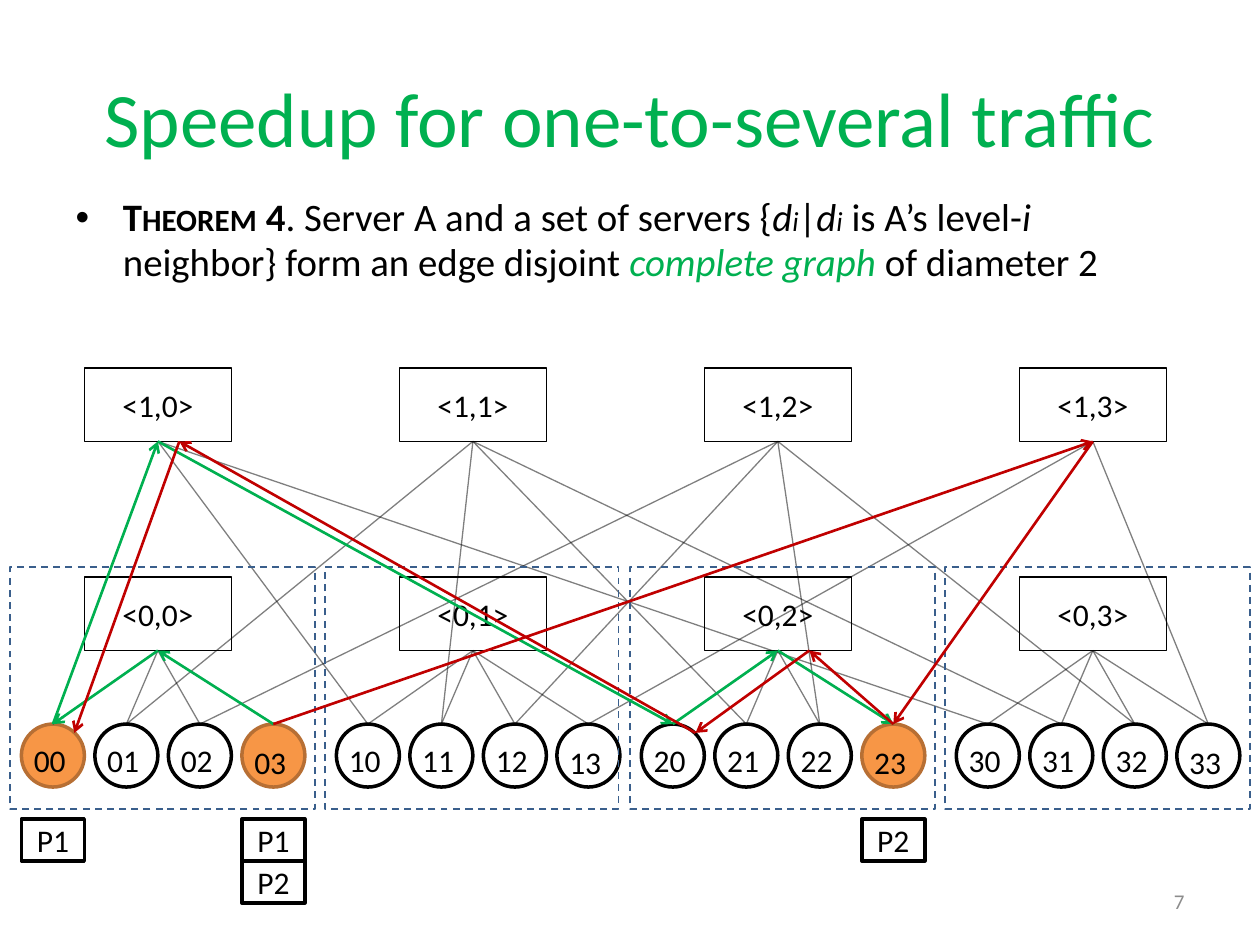
from pptx import Presentation
from pptx.dml.color import RGBColor
from pptx.enum.dml import MSO_LINE
from pptx.enum.shapes import MSO_CONNECTOR, MSO_SHAPE
from pptx.enum.text import MSO_ANCHOR, MSO_AUTO_SIZE, PP_ALIGN
from pptx.oxml.ns import qn
from pptx.util import Inches, Pt
from lxml import etree

RECT, OVAL = MSO_SHAPE.RECTANGLE, MSO_SHAPE.OVAL
LINE, DASH = MSO_CONNECTOR.STRAIGHT, MSO_LINE.DASH
MIDDLE, TOP_ANCHOR = MSO_ANCHOR.MIDDLE, MSO_ANCHOR.TOP
LEFT, CENTER, RIGHT = PP_ALIGN.LEFT, PP_ALIGN.CENTER, PP_ALIGN.RIGHT
NO_FIT = MSO_AUTO_SIZE.NONE

COLORS = {
    "black": "000000", "white": "FFFFFF", "green": "00B050", "red": "C00000",
    "orange": "F79646", "rust": "B76F34", "blue": "3A5F8C", "gray": "8C8C8C",
}
FONT = "Calibri"
TOP, BOTTOM = 0, 2
STEP = 7 / 12
SERVER = 0.5
PODS = [(0.08, 2.42), (2.58, 2.33), (5, 2.42), (7.5, 2.42)]
MARKED = {"00", "03", "23"}
TAGS = [("00", 0, "P1"), ("23", 0, "P2"), ("03", 0, "P1"), ("03", 1, "P2")]
THEOREM = [
    ("Theorem", {"bold": True}, "caps"),
    (" 4", {"bold": True}, ""),
    (". Server A and a set of servers {", {}, ""),
    ("d", {"italic": True}, ""),
    ("i", {"italic": True, "size": Pt(15.7)}, ""),
    ("|", {}, ""),
    ("d", {"italic": True}, ""),
    ("i", {"italic": True, "size": Pt(15.7)}, ""),
    (" is A’s level-", {}, ""),
    ("i", {"italic": True}, ""),
    (" neighbor} form an edge disjoint ", {}, ""),
    ("complete graph ", {"italic": True}, "green"),
    ("of diameter 2", {}, ""),
]
ROUTES = {
    "green": [
        (("03",), ("<0,0>",)), (("<0,0>",), ("00",)),
        (("<0,2>",), ("23",)), (("20",), ("<0,2>",)),
        (("<1,0>",), ("20",)), (("00",), ("<1,0>",)),
    ],
    "red": [
        (("<1,3>",), ("23",)), (("03",), ("<1,3>",)),
        (("<1,0>", 0.17, 0), ("00", 0.17, 0.07)),
        (("23",), ("<0,2>", 0.25, 0)),
        (("20", 0.18, 0.07), ("<1,0>", 0.17, 0)),
        (("<0,2>", 0.25, 0), ("20", 0.18, 0.07)),
    ],
}


def paint(color):
    """Return the named colour."""
    return RGBColor.from_string(COLORS[color])


def style(item, values):
    """Set each attribute in values on item."""
    for name, value in values.items():
        setattr(item, name, value)


def write(para, text, color="black", **values):
    """Add one formatted run to a paragraph."""
    run = para.add_run()
    run.text = text
    style(run.font, {"name": FONT, "size": Pt(18), **values})
    run.font.color.rgb = paint(color)
    return run


def add_box(slide, kind, box, fill, edge, width, text=""):
    """Add a filled or hollow shape with centred text."""
    shape = slide.shapes.add_shape(kind, *map(Inches, box))
    shape.shadow.inherit = False
    if fill:
        shape.fill.solid()
        shape.fill.fore_color.rgb = paint(fill)
    else:
        shape.fill.background()
    shape.line.color.rgb = paint(edge)
    shape.line.width = Pt(width)
    if text:
        style(shape.text_frame, {"vertical_anchor": MIDDLE, "word_wrap": True})
        para = shape.text_frame.paragraphs[0]
        para.alignment = CENTER
        write(para, text)
    return shape


def add_label(slide, box, text, align=LEFT, anchor=TOP_ANCHOR, **values):
    """Add a plain text box."""
    frame = slide.shapes.add_textbox(*map(Inches, box)).text_frame
    style(frame, {"word_wrap": True, "vertical_anchor": anchor})
    para = frame.paragraphs[0]
    para.alignment = align
    write(para, text, **values)


def add_link(slide, nodes, start, end, color="black", width=0.75, arrow=False):
    """Link two nodes, each given by name and an optional offset."""
    points = []
    for name, *shift in (start, end):
        shape, site = nodes[name]
        x = shape.left + shape.width // 2
        y = shape.top + (shape.height if site == BOTTOM else 0)
        dx, dy = shift or (0, 0)
        points += [x + Inches(dx), y + Inches(dy)]
    link = slide.shapes.add_connector(LINE, *points)
    for (name, *shift), join in ((start, link.begin_connect), (end, link.end_connect)):
        if not shift:
            join(*nodes[name])
    link.line.color.rgb = paint(color)
    link.line.width = Pt(width)
    props = link._element.spPr
    line = props.find(qn("a:ln"))
    if arrow:
        etree.SubElement(line, qn("a:tailEnd"), type="arrow")
    else:
        tint = line.find(".//" + qn("a:srgbClr"))
        etree.SubElement(tint, qn("a:alpha"), val="50000")
    etree.SubElement(props, qn("a:effectLst"))


def add_switch(slide, nodes, x, y, name):
    """Add one switch and record its lower side."""
    box = (x, y, 2 * STEP, STEP)
    nodes[name] = (add_box(slide, RECT, box, "white", "black", 0.75, name), BOTTOM)


def add_pod(slide, nodes, x, y, pod):
    """Add a level-0 switch with its four servers."""
    switch = f"<0,{pod}>"
    add_switch(slide, nodes, x + SERVER, y, switch)
    names = [f"{pod}{num}" for num in range(4)]
    spots = [x + num * STEP for num in range(4)]
    for name, left in zip(names, spots):
        fill, edge = ("orange", "rust") if name in MARKED else ("white", "black")
        box = (left, y + 2 * STEP, SERVER, SERVER)
        nodes[name] = (add_box(slide, OVAL, box, fill, edge, 2), TOP)
    for name in names:
        add_link(slide, nodes, (name,), (switch,))
    for name, left in zip(names, spots):
        drop = 1.27 if name == names[-1] else 1.25
        add_label(slide, (left, y + drop, SERVER, 0.4), name)


def add_net(slide, x, y):
    """Add both switch levels, the servers, pod frames, tags and routes."""
    nodes = {}
    lefts = [x + left + 0.09 for left, _ in PODS]
    for pod, left in enumerate(lefts):
        add_pod(slide, nodes, left, y + 1.66, pod)
    for pod, left in enumerate(lefts):
        add_switch(slide, nodes, left + SERVER, y, f"<1,{pod}>")
    for pod in range(4):
        for num in range(4):
            add_link(slide, nodes, (f"{pod}{num}",), (f"<1,{num}>",))
    for left, width in PODS:
        frame = add_box(slide, RECT, (x + left, y + 1.58, width, 1.92), None, "blue", 1)
        frame.line.dash_style = DASH
    for name, row, text in TAGS:
        left = nodes[name][0].left / Inches(1)
        box = (left, y + 3.58 + row / 3, SERVER, 1 / 3)
        add_box(slide, RECT, box, "white", "black", 2, text)
    for color, links in ROUTES.items():
        for start, end in links:
            add_link(slide, nodes, start, end, color, 1.5, True)


def place(shape, box):
    """Move a placeholder into a box."""
    names = ("left", "top", "width", "height")
    style(shape, dict(zip(names, map(Inches, box))))


def add_title(slide, box):
    """Fill the title placeholder."""
    title = slide.shapes.title
    place(title, box)
    style(title.text_frame, {"vertical_anchor": MIDDLE, "auto_size": NO_FIT})
    para = title.text_frame.paragraphs[0]
    para.alignment = CENTER
    write(para, "Speedup for one-to-several traffic", "green", size=Pt(44))


def add_theorem(slide, box):
    """Fill the body placeholder with the theorem."""
    body = slide.placeholders[1]
    place(body, box)
    body.text_frame.auto_size = NO_FIT
    para = body.text_frame.paragraphs[0]
    para.line_spacing = 0.97
    for text, values, mark in THEOREM:
        color = "green" if mark == "green" else "black"
        run = write(para, text, color, **{"size": Pt(22.2), **values})
        if mark == "caps":
            run.font._element.set("cap", "small")


def main():
    """Build and save the slide."""
    deck = Presentation()
    style(deck, {"slide_width": Inches(10), "slide_height": Inches(7.5)})
    slide = deck.slides.add_slide(deck.slide_layouts[1])
    add_title(slide, (0.5, 0.3, 9, 1.25))
    add_theorem(slide, (0.5, 1.5, 9, 0.75))
    add_net(slide, 0, 2.92)
    add_label(slide, (7.17, 6.95, 2.33, 0.4), "7", RIGHT, MIDDLE,
              color="gray", size=Pt(12))
    deck.save("out.pptx")


if __name__ == "__main__":
    main()
